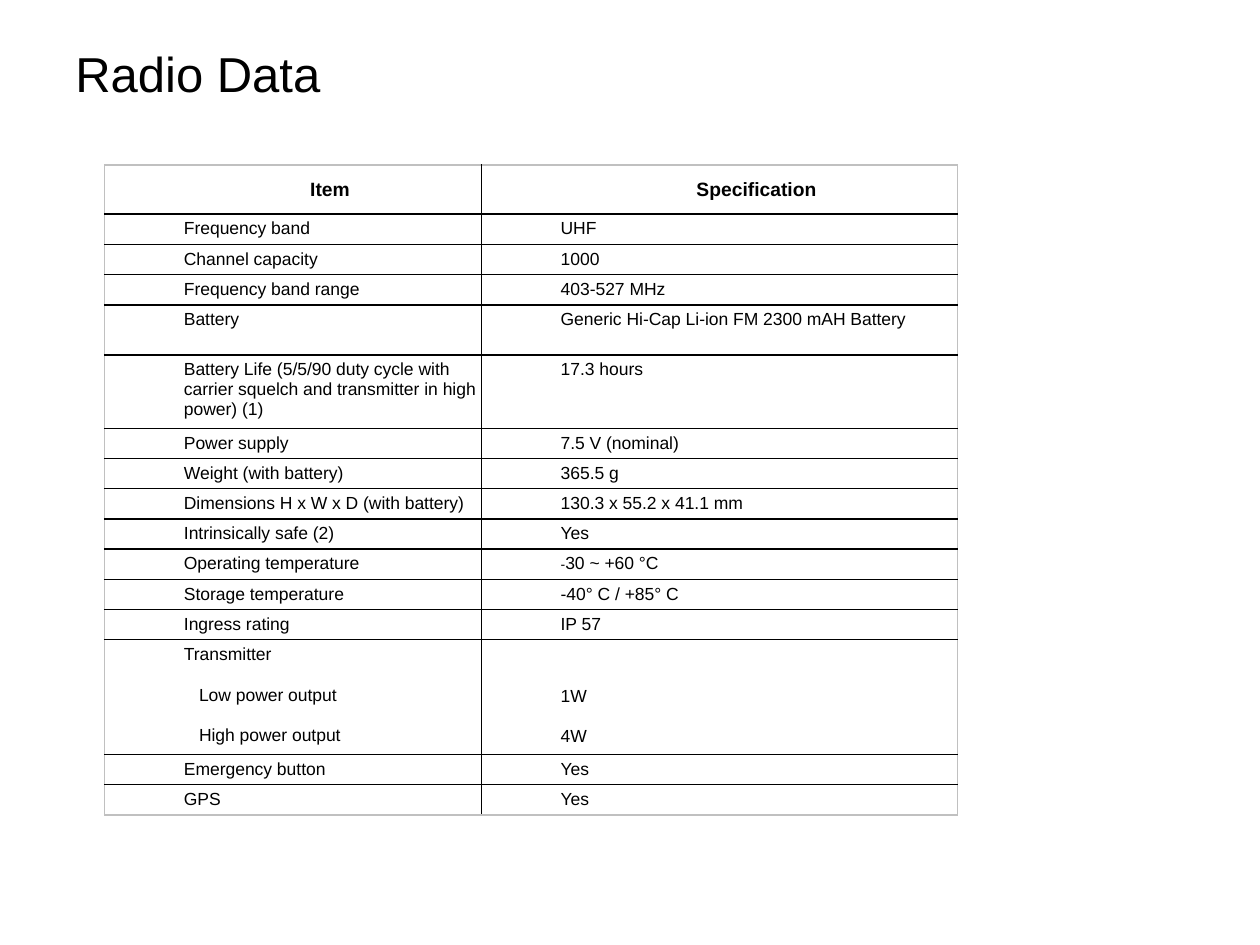
from lxml.etree import SubElement
from pptx import Presentation
from pptx.dml.color import RGBColor
from pptx.enum.text import MSO_ANCHOR, PP_ALIGN
from pptx.oxml.ns import qn
from pptx.util import Inches, Pt

# Content: a cell is a list of lines, a line is a list of (text, size) runs or text
TITLE = "Radio Data"
HEAD = ("Item", "Specification")
ROWS = [
    ("Frequency band", "UHF"),
    ("Channel capacity", "1000"),
    ("Frequency band range", "403-527 MHz"),
    ("Battery", "Generic Hi-Cap Li-ion FM 2300 mAH Battery"),
    ("Battery Life (5/5/90 duty cycle with carrier squelch and transmitter "
     "in high power) (1)", "17.3 hours"),
    ("Power supply", "7.5 V (nominal)"),
    ("Weight (with battery)", "365.5 g"),
    ("Dimensions H x W x D (with battery)", "130.3 x 55.2 x 41.1 mm"),
    ("Intrinsically safe (2)", "Yes"),
    ("Operating temperature", [[("-", "small"), ("30 ~ +60 °C", "body")]]),
    ("Storage temperature", "-40° C / +85° C"),
    ("Ingress rating", "IP 57"),
    ("Transmitter", ""),
    ("Emergency button", "Yes"),
    ("GPS", "Yes"),
]
POWER = [("Low power output", "1W"), ("High power output", "4W")]
SEND = 13  # table row of the transmitter, which also lists its power levels
TALL = {0: 0.39, 4: 0.4, 5: 0.58, SEND: 0.91}
ROW_H = 0.24
COLS = (2.99, 3.78)

THEME = {
    "font": "Arial", "ink": "000000", "edge": "C0C0C0",
    "title": 28, "head": 11, "body": 10, "small": 8, "gap": 12,
}
INDENT, STEP = 0.59, 0.12
SIDES = ("lnL", "lnR", "lnT", "lnB")


def write(para, runs, bold=False):
    for text, size in runs:
        run = para.add_run()
        run.text = text
        style = {"name": THEME["font"], "size": Pt(THEME[size]), "bold": bold}
        for key, value in style.items():
            setattr(run.font, key, value)
        run.font.color.rgb = RGBColor.from_string(THEME["ink"])


def border(cell, outer):
    props = cell._tc.get_or_add_tcPr()
    for side, out in zip(SIDES, outer):
        line = SubElement(props, qn("a:" + side), w=str(Pt(1)))
        fill = SubElement(line, qn("a:solidFill"))
        SubElement(fill, qn("a:srgbClr"), val=THEME["edge" if out else "ink"])
    cell.fill.background()


def fill_cell(cell, lines, head=False, top=0.04):
    side, edge = (0.07, 0) if head else (0.04, top)
    form = {
        "margin_left": Inches(side), "margin_right": Inches(side),
        "margin_top": Inches(edge), "margin_bottom": Inches(0 if head else 0.04),
        "vertical_anchor": MSO_ANCHOR.MIDDLE if head else MSO_ANCHOR.TOP,
    }
    for key, value in form.items():
        setattr(cell, key, value)
    frame = cell.text_frame
    for i, (runs, inset) in enumerate(lines):
        para = frame.add_paragraph() if i else frame.paragraphs[0]
        para.alignment = PP_ALIGN.CENTER if head else PP_ALIGN.LEFT
        para.space_before = Pt(THEME["gap"])
        props = para._p.get_or_add_pPr()
        props.set("marL", str(Inches(inset)))
        props.set("indent", "0")
        write(para, runs, head)


def get_lines(item, size):
    groups = [[(item, size)]] if isinstance(item, str) else item
    return [(runs, INDENT) for runs in groups if runs[0][0]]


deck = Presentation()
deck.slide_width, deck.slide_height = Inches(10), Inches(7.5)
slide = deck.slides.add_slide(deck.slide_layouts[6])

# Table
data = [HEAD] + ROWS
last = len(data) - 1
highs = [TALL.get(r, ROW_H) for r in range(len(data))]
table = slide.shapes.add_table(
    len(data), len(COLS), Inches(0.83), Inches(1.31),
    Inches(sum(COLS)), Inches(sum(highs))).table
table.first_row = table.horz_banding = False
for col, width in zip(table.columns, COLS):
    col.width = Inches(width)
for row, high in zip(table.rows, highs):
    row.height = Inches(high)

for r, pair in enumerate(data):
    for c, item in enumerate(pair):
        cell = table.cell(r, c)
        lines = get_lines(item, "body" if r else "head")
        top = 0.04
        if r == SEND:
            inset = INDENT if c else INDENT + STEP
            lines += [([(level[c], "body")], inset) for level in POWER]
            if c:  # values start level with the second line on the left
                top += (THEME["body"] * 1.15 + THEME["gap"]) / 72
        fill_cell(cell, lines, head=r == 0, top=round(top, 2))
        border(cell, (c == 0, c == 1, r == 0, r == last))

# Title
box = slide.shapes.add_textbox(Inches(0.5), Inches(0.3), Inches(9), Inches(0.93))
box.text_frame.word_wrap = True
write(box.text_frame.paragraphs[0], [(TITLE, "title")])

deck.save("out.pptx")
